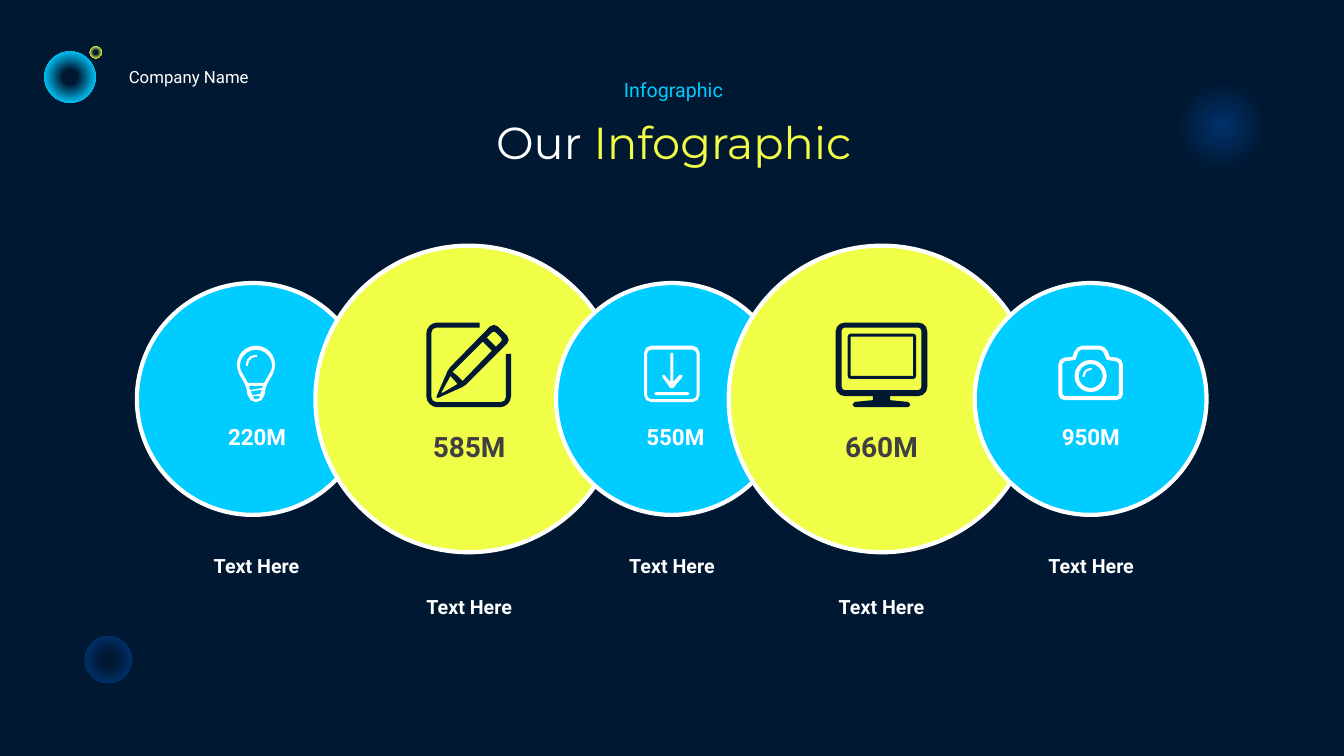
from lxml import etree
from pptx import Presentation, util as u
from pptx.dml.color import RGBColor
from pptx.enum import shapes, text
from pptx.oxml import ns

# Grid of 160 columns by 90 rows; icons are drawn in hundredths of an inch
CELL = u.Inches(1) / 12
ICON_SCALE = u.Inches(1) / 10000
NAVY, BLUE, CYAN, LIME = "001832", "00316B", "00CCFF", "F0FE47"
WHITE, GREY = "FFFFFF", "404040"


def cells(*lengths):
    return [u.Emu(round(length * CELL)) for length in lengths]


def paint(color_format, value):
    color_format.rgb = RGBColor.from_string(value)


def add_circle(slide, left, top, size):
    circle = slide.shapes.add_shape(shapes.MSO_SHAPE.OVAL, *cells(left, top, size, size))
    circle.shadow.inherit = False
    return circle


def add_disc(slide, center, middle, size, color):
    disc = add_circle(slide, center - size / 2, middle - size / 2, size)
    disc.fill.solid()
    paint(disc.fill.fore_color, color)
    paint(disc.line.color, WHITE)
    disc.line.width = u.Pt(3)


def add_glow(slide, left, top, size, stops):
    """A circle with a round gradient, given as (percent, color) stops."""
    glow = add_circle(slide, left, top, size)
    glow.line.fill.background()
    gradient = etree.Element(ns.qn("a:gradFill"), rotWithShape="1")
    stop_list = etree.SubElement(gradient, ns.qn("a:gsLst"))
    for percent, color in stops:
        stop = etree.SubElement(stop_list, ns.qn("a:gs"), pos=str(percent * 1000))
        etree.SubElement(stop, ns.qn("a:srgbClr"), val=color)
    shade = etree.SubElement(gradient, ns.qn("a:path"), path="circle")
    etree.SubElement(shade, ns.qn("a:fillToRect"), l="50000", t="50000", r="50000", b="50000")
    glow._element.spPr.find(ns.qn("a:prstGeom")).addnext(gradient)


def format_runs(paragraph, size, colors, font="Roboto", bold=False):
    for run, color in zip(paragraph.runs, colors):
        run.font.size, run.font.name, run.font.bold = u.Pt(size), font, bold
        paint(run.font.color, color)


def add_label(slide, words, box, size, color, bold=False, centered=True):
    label = slide.shapes.add_textbox(*cells(*box))
    frame = label.text_frame
    frame.text = words
    frame.word_wrap = True
    paragraph = frame.paragraphs[0]
    paragraph.alignment = text.PP_ALIGN.CENTER if centered else text.PP_ALIGN.LEFT
    format_runs(paragraph, size, [color], bold=bold)


def add_title(slide, parts, colors):
    title = slide.shapes.title
    title.left, title.top, title.width, title.height = cells(43.8, 13.08, 72.84, 7.68)
    frame = title.text_frame
    frame.auto_size = text.MSO_AUTO_SIZE.NONE
    frame.vertical_anchor = text.MSO_ANCHOR.TOP
    paragraph = frame.paragraphs[0]
    paragraph.alignment = text.PP_ALIGN.CENTER
    for part in parts:
        paragraph.add_run().text = part
    format_runs(paragraph, 32, colors, font="Montserrat")


# Icon outlines: each corner is (x, y) or (x, y, radius)
def box(left, top, right, bottom, radius=0):
    return [(x, y, radius) for x, y in
            ((left, top), (right, top), (right, bottom), (left, bottom))]


def toward(start, end, length):
    dx, dy = end[0] - start[0], end[1] - start[1]
    share = length / (dx * dx + dy * dy) ** 0.5
    return start[0] + dx * share, start[1] + dy * share


def round_corners(corners):
    points = []
    for index, corner in enumerate(corners):
        radius = corner[2] if len(corner) == 3 else 0
        if not radius:
            points.append(corner[:2])
            continue
        before, after = corners[index - 1], corners[(index + 1) % len(corners)]
        curve = [toward(corner, before, radius), toward(corner, before, radius * 0.45),
                 toward(corner, after, radius * 0.45), toward(corner, after, radius)]
        steps = 1 if radius < 2.5 else max(2, round(radius / 3))
        for step in range(steps + 1):
            t = step / steps
            weights = ((1 - t) ** 3, 3 * t * (1 - t) ** 2, 3 * t * t * (1 - t), t ** 3)
            points.append(tuple(sum(w * p[axis] for w, p in zip(weights, curve))
                                for axis in (0, 1)))
    return points


def add_icon(slide, left, top, outlines, color):
    builder = None
    for corners in outlines:
        points = [(x * 100, y * 100) for x, y in round_corners(corners)]
        if builder is None:
            builder = slide.shapes.build_freeform(*points[0], scale=ICON_SCALE)
        else:
            builder.move_to(*points[0])
        builder.add_line_segments(points[1:], close=True)
    icon = builder.convert_to_shape(*cells(left, top))
    icon.shadow.inherit = False
    icon.fill.solid()
    paint(icon.fill.fore_color, color)
    icon.line.fill.background()


# Each icon is a list of shapes, each shape a list of outlines
BULB = [
    [[(0, 0, 19), (38, 0, 19), (38, 24, 5), (29, 40, 3), (26, 56, 7), (12, 56, 7),
      (9, 40, 3), (0, 24, 5)],
     [(3, 4, 16), (35, 4, 16), (35, 23, 3), (27, 37), (11, 37), (3, 23, 3)],
     [(12, 40), (26, 40), (25, 42), (13, 44)],
     [(14, 45), (25, 44), (23, 48), (15, 49)],
     [(16, 50), (23, 50), (22, 53, 1), (17, 53, 1)]],
    [[(20, 9), (9, 9, 9), (9, 20), (11, 20), (11, 11, 8), (20, 11)]],
]
PENCIL = [
    [[(79, 31), (79, 79, 5), (5, 79, 5), (5, 5, 5), (53, 5), (53, 0), (0, 0, 11),
      (0, 84, 11), (84, 84, 11), (84, 31)],
     [(22, 46, 2), (9, 76, 3), (38, 63, 2), (84, 17, 5.5), (67, 0, 5.5)],
     [(67, 8, 2.5), (76, 17, 2.5), (69, 24), (60, 15)],
     [(56, 19), (65, 28), (36, 58), (31, 53), (26, 49)],
     [(31, 61), (14, 71, 2), (24, 53)]],
]
DOWNLOAD = [
    [box(0, 0, 55, 56, 7), box(3, 4, 52, 53, 4), box(10, 46, 45, 49, 1.5),
     [(26, 42), (29, 42), (38, 31), (38, 29), (35, 29), (29, 36), (29, 7, 1),
      (26, 7, 1), (26, 36), (20, 29), (18, 29), (18, 31)]],
]
MONITOR = [
    [box(12, 11, 80, 56, 3), box(15, 14, 77, 53)],
    [[(0, 0, 9), (91, 0, 9), (91, 73, 9), (54, 73), (54, 77), (74, 79, 2), (74, 84, 2),
      (17, 84, 2), (17, 79, 2), (37, 77), (37, 73), (0, 73, 9)],
     box(6, 5, 85, 67, 3)],
]
CAMERA = [
    [box(16, 14, 48, 46, 16), box(20, 18, 44, 42, 12)],
    [[(33, 22), (24, 22, 8), (24, 31), (26, 31), (26, 24, 6), (33, 24)]],
    [[(0, 54, 6), (64, 54, 6), (64, 12.5, 6), (51, 11), (47, 0, 6), (18, 0, 6),
      (14, 11), (0, 12.5, 6)],
     [(4, 50, 2), (60, 50, 2), (60, 16, 2), (48, 14), (43.5, 4, 2), (20.5, 4, 2),
      (17, 14), (4, 16, 2)]],
]

# Disc size and color, icon color and top, value top, size and color, caption top
SMALL = (27.6, CYAN, WHITE, 41.16, 49.8, 16, WHITE, 65.4)
LARGE = (36.5, LIME, NAVY, 38.4, 50.52, 20, GREY, 70.2)
# Centres of disc, value and caption, icon left, icon, value, style
ITEMS = [
    (30.1, 30.6, 30.54, 28.2, BULB, "220M", SMALL),
    (55.8, 55.86, 55.86, 50.76, PENCIL, "585M", LARGE),
    (80, 80.4, 80, 76.68, DOWNLOAD, "550M", SMALL),
    (105, 104.94, 104.94, 99.48, MONITOR, "660M", LARGE),
    (129.84, 129.86, 129.9, 126, CAMERA, "950M", SMALL),
]


def add_chain(slide):
    for center, *_, style in ITEMS:
        add_disc(slide, center, 47.5, *style[:2])
    for _, value_center, caption_center, icon_left, icon, value, style in ITEMS:
        _, _, icon_color, icon_top, value_top, size, color, caption_top = style
        for outlines in icon:
            add_icon(slide, icon_left, icon_top, outlines, icon_color)
        add_label(slide, value, (value_center - 6.4, value_top, 12.8, 5), size, color,
                  bold=True)
        add_label(slide, "Text Here", (caption_center - 7, caption_top, 14, 4.08), 14, WHITE,
                  bold=True)


def main():
    presentation = Presentation()
    presentation.slide_width, presentation.slide_height = cells(160, 90)
    slide = presentation.slides.add_slide(presentation.slide_layouts[5])
    slide.background.fill.solid()
    paint(slide.background.fill.fore_color, NAVY)

    add_chain(slide)

    # Header
    add_label(slide, "Company Name", (14.16, 7.34, 21.6, 3.6), 12, WHITE, centered=False)
    add_label(slide, "Infographic", (68.64, 8.64, 23.04, 4.08), 14, CYAN)
    add_title(slide, ["Our ", "Infographic"], [WHITE, LIME])

    # Glowing circles
    for left, top, size, color in ((5.28, 6.12, 6.12, CYAN), (10.68, 5.52, 1.44, LIME),
                                   (10.08, 75.72, 5.64, BLUE)):
        add_glow(slide, left, top, size, [(0, NAVY), (20, NAVY), (75, color)])
    add_glow(slide, 138.84, 8.4, 13.2, [(0, BLUE), (59, NAVY)])

    presentation.save("out.pptx")


if __name__ == "__main__":
    main()
